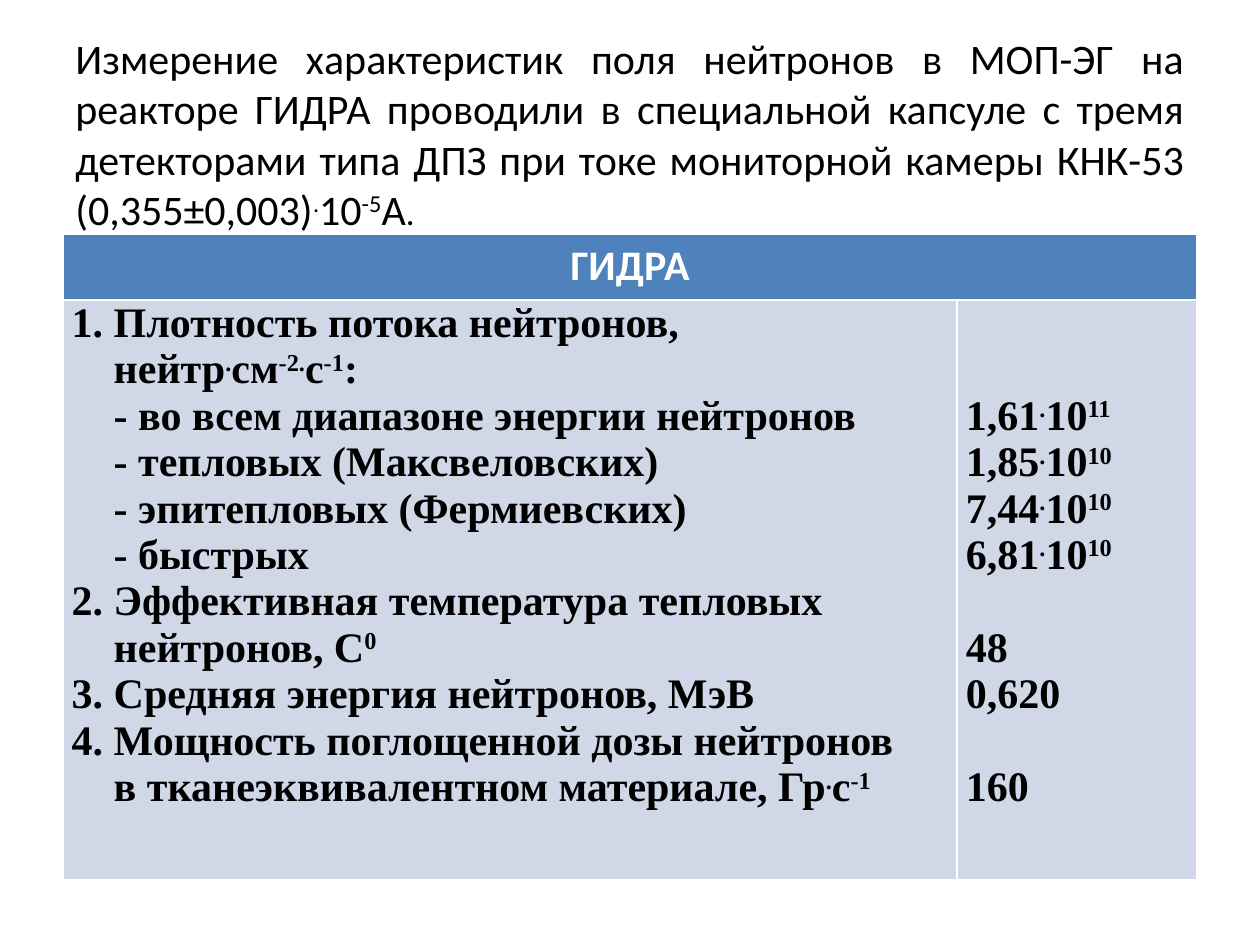
from dataclasses import dataclass

from pptx import Presentation
from pptx.dml.color import RGBColor
from pptx.enum.text import MSO_ANCHOR, PP_ALIGN
from pptx.util import Pt

LEFT, MID, JUST = PP_ALIGN.LEFT, PP_ALIGN.CENTER, PP_ALIGN.JUSTIFY
TOP = MSO_ANCHOR.TOP


@dataclass(frozen=True)
class Theme:
    sans: str = "Calibri"
    serif: str = "Times New Roman"
    ink: str = "000000"
    white: str = "FFFFFF"
    head: str = "4F81BD"
    body: str = "D0D8E8"
    size: float = 24
    small: float = 20
    step: float = 26.57  # height of one serif line


@dataclass(frozen=True)
class Line:
    text: str
    indent: float = 0
    skip: int = 0  # empty lines above


THEME = Theme()
SUB = 24  # indent of the lines below a numbered item

# Text between carets is superscript
TITLE = ("Измерение характеристик поля нейтронов в МОП-ЭГ на реакторе ГИДРА "
         "проводили в специальной капсуле с тремя детекторами типа ДПЗ при токе "
         "мониторной камеры КНК-53 (0,355±0,003)^.^10^-5^А")
NAMES = [
    Line("1. Плотность потока нейтронов,"),
    Line("нейтр^.^см^-2.^с^-1^:", SUB),
    Line("- во всем диапазоне энергии нейтронов", SUB),
    Line("- тепловых (Максвеловских)", SUB),
    Line("- эпитепловых (Фермиевских)", SUB),
    Line("- быстрых", SUB),
    Line("2. Эффективная температура тепловых"),
    Line("нейтронов, С^0^", SUB),
    Line("3. Средняя энергия нейтронов, МэВ"),
    Line("4. Мощность поглощенной дозы нейтронов"),
    Line("в тканеэквивалентном материале, Гр^.^с^-1^", SUB),
]
VALUES = [
    Line("1,61^.^10^11^", skip=2),
    Line("1,85^.^10^10^"),
    Line("7,44^.^10^10^"),
    Line("6,81^.^10^10^"),
    Line("48", skip=1),
    Line("0,620"),
    Line("160", skip=1),
]


def write(par, text: str, *, face: str, size: float = THEME.size,
          color: str = THEME.ink, bold: bool = False, align=LEFT) -> None:
    """Add text to a paragraph, raising the parts between carets."""
    par.alignment = align
    for i, part in enumerate(text.split("^")):
        if not part:
            continue
        run = par.add_run()
        run.text = part
        font = run.font
        font.name, font.size, font.bold = face, Pt(size), bold
        font.color.rgb = RGBColor.from_string(color)
        if i % 2:
            run._r.get_or_add_rPr().set("baseline", "30000")


def paint(cell, color: str) -> None:
    cell.fill.solid()
    cell.fill.fore_color.rgb = RGBColor.from_string(color)


def fill(cell, lines: list[Line]) -> None:
    """Put a list of lines in a body cell."""
    paint(cell, THEME.body)
    cell.vertical_anchor = TOP
    cell.margin_left = cell.margin_right = Pt(5)
    cell.margin_top = Pt(lines[0].skip * THEME.step)
    cell.margin_bottom = Pt(0)
    frame = cell.text_frame
    for i, line in enumerate(lines):
        par = frame.add_paragraph() if i else frame.paragraphs[0]
        props = par._p.get_or_add_pPr()
        props.set("marL", str(Pt(line.indent)))
        if i and line.skip:
            par.space_before = Pt(line.skip * THEME.step)
        write(par, line.text, face=THEME.serif, bold=True)


def main() -> None:
    deck = Presentation()
    deck.slide_width, deck.slide_height = Pt(720), Pt(540)
    slide = deck.slides.add_slide(deck.slide_layouts[6])

    # Heading; the closing break keeps its last line justified
    box = slide.shapes.add_textbox(Pt(36), Pt(18.5), Pt(648), Pt(116))
    frame = box.text_frame
    frame.word_wrap = True
    frame.vertical_anchor = TOP
    frame.margin_top = frame.margin_bottom = Pt(0)
    par = frame.paragraphs[0]
    write(par, TITLE, face=THEME.sans, align=JUST)
    write(par, ".", face=THEME.sans, size=THEME.small, align=JUST)
    par.add_line_break()

    # Table
    grid = slide.shapes.add_table(2, 2, Pt(36), Pt(134), Pt(648), Pt(368.6)).table
    for col, width in zip(grid.columns, (511, 137)):
        col.width = Pt(width)
    for row, height in zip(grid.rows, (37.4, 331.2)):
        row.height = Pt(height)

    # Header across both columns
    head = grid.cell(0, 0)
    head.merge(grid.cell(0, 1))
    paint(head, THEME.head)
    write(head.text_frame.paragraphs[0], "ГИДРА", face=THEME.sans,
          color=THEME.white, bold=True, align=MID)

    # Body
    for i, lines in enumerate((NAMES, VALUES)):
        fill(grid.cell(1, i), lines)

    deck.save("out.pptx")


if __name__ == "__main__":
    main()
